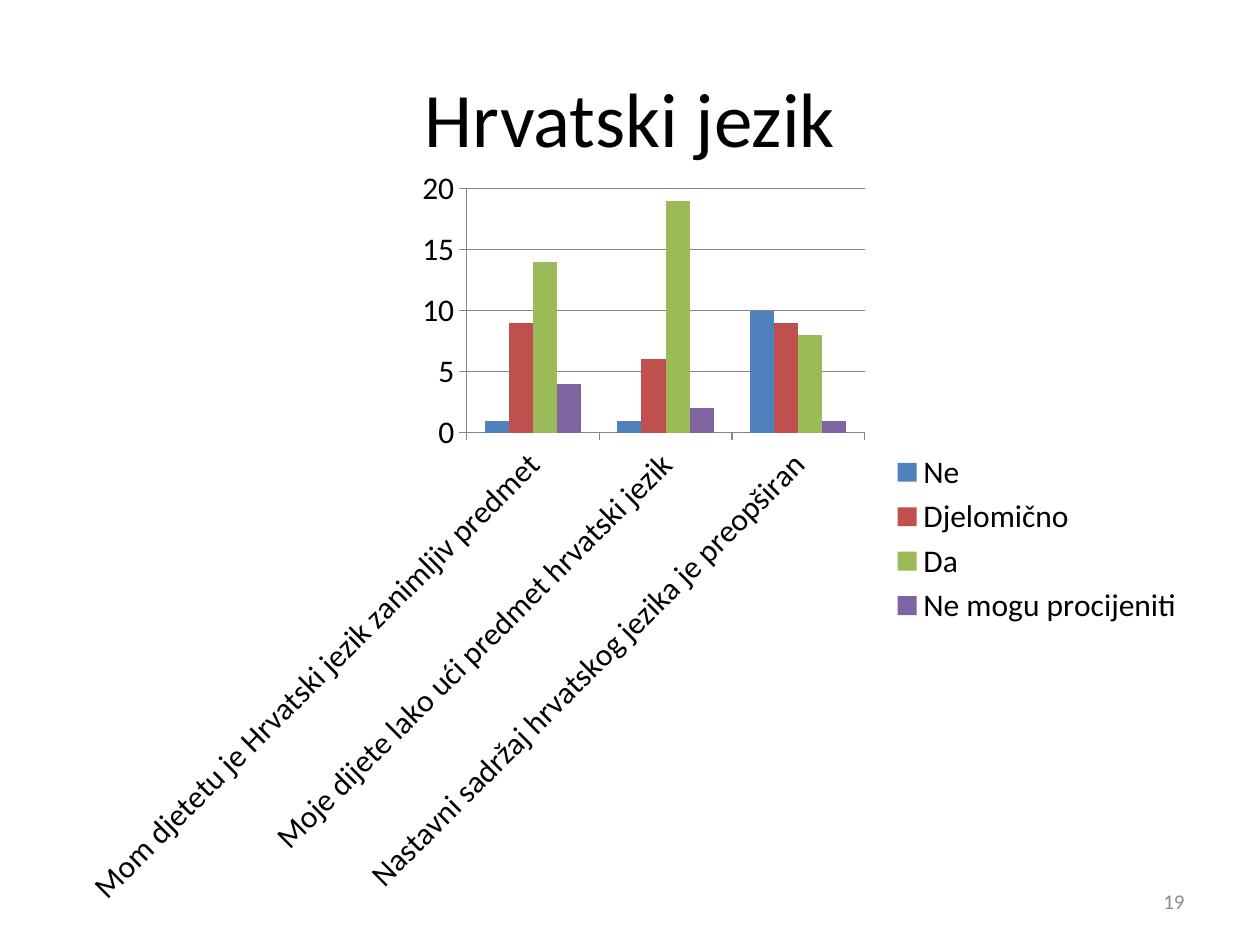
from pptx import Presentation
from pptx.chart.data import CategoryChartData
from pptx.dml.color import RGBColor
from pptx.enum.chart import XL_CHART_TYPE, XL_LEGEND_POSITION, XL_TICK_MARK
from pptx.enum.text import MSO_ANCHOR, PP_ALIGN
from pptx.util import Pt

COLUMNS = XL_CHART_TYPE.COLUMN_CLUSTERED
LEGEND_RIGHT = XL_LEGEND_POSITION.RIGHT
TICK_OUTSIDE = XL_TICK_MARK.OUTSIDE
MIDDLE = MSO_ANCHOR.MIDDLE
CENTER, RIGHT = PP_ALIGN.CENTER, PP_ALIGN.RIGHT

TITLE = "Hrvatski jezik"
SLIDE_NUMBER = "19"
CATEGORIES = [
    "Mom djetetu je Hrvatski jezik zanimljiv predmet",
    "Moje dijete lako ući predmet hrvatski jezik",
    "Nastavni sadržaj hrvatskog jezika je preopširan",
]
SERIES = [
    ("Ne", (1, 1, 10), "blue"),
    ("Djelomično", (9, 6, 9), "red"),
    ("Da", (14, 19, 8), "green"),
    ("Ne mogu procijeniti", (4, 2, 1), "purple"),
]
COLORS = {
    "text": "000000",
    "number": "8C8C8C",
    "line": "868686",
    "blue": "4F81BD",
    "red": "C0504D",
    "green": "9BBB59",
    "purple": "8064A2",
}
FONT = "Calibri"
EMU_PER_PIXEL = 914400 / 126
SLIDE_SIZE = (1260, 945)
TITLE_BOX = (63, 38, 1134, 157)
CHART_BOX = (63, 157, 1134, 764)
NUMBER_BOX = (903, 876, 294, 50)
LABEL_ROTATION = -45


def emu(*pixels):
    return [round(value * EMU_PER_PIXEL) for value in pixels]


def color(name):
    return RGBColor.from_string(COLORS[name])


def format_font(font, size, color_name):
    font.name = FONT
    font.size = Pt(size)
    font.color.rgb = color(color_name)


def write_text(shape, text, size, color_name, alignment):
    frame = shape.text_frame
    frame.text = text
    frame.word_wrap = True
    frame.vertical_anchor = MIDDLE
    paragraph = frame.paragraphs[0]
    paragraph.alignment = alignment
    format_font(paragraph.runs[0].font, size, color_name)


def add_survey_chart(slide):
    data = CategoryChartData()
    data.categories = CATEGORIES
    for name, values, _ in SERIES:
        data.add_series(name, values)
    chart = slide.shapes.add_chart(COLUMNS, *emu(*CHART_BOX), data).chart
    format_font(chart.font, 18, "text")
    chart.has_title = False
    chart.has_legend = True
    chart.legend.position = LEGEND_RIGHT
    chart.legend.include_in_layout = False

    plot = chart.plots[0]
    plot.gap_width = 150
    plot.overlap = 0
    plot.vary_by_categories = False
    for series, (_, _, color_name) in zip(plot.series, SERIES):
        series.format.fill.solid()
        series.format.fill.fore_color.rgb = color(color_name)

    value_axis, category_axis = chart.value_axis, chart.category_axis
    value_axis.has_major_gridlines = True
    for axis in (value_axis, category_axis):
        axis.major_tick_mark = TICK_OUTSIDE
        format_font(axis.tick_labels.font, 18, "text")
    for part in (value_axis, category_axis, value_axis.major_gridlines):
        part.format.line.color.rgb = color("line")
        part.format.line.width = Pt(0.75)
    label_body = category_axis._element.txPr.bodyPr
    label_body.set("rot", str(LABEL_ROTATION * 60000))
    label_body.set("vert", "horz")


presentation = Presentation()
presentation.slide_width, presentation.slide_height = emu(*SLIDE_SIZE)
slide = presentation.slides.add_slide(presentation.slide_layouts[5])

title = slide.shapes.title
title.left, title.top, title.width, title.height = emu(*TITLE_BOX)
write_text(title, TITLE, 44, "text", CENTER)

add_survey_chart(slide)

number = slide.shapes.add_textbox(*emu(*NUMBER_BOX))
write_text(number, SLIDE_NUMBER, 12, "number", RIGHT)

presentation.save("out.pptx")
